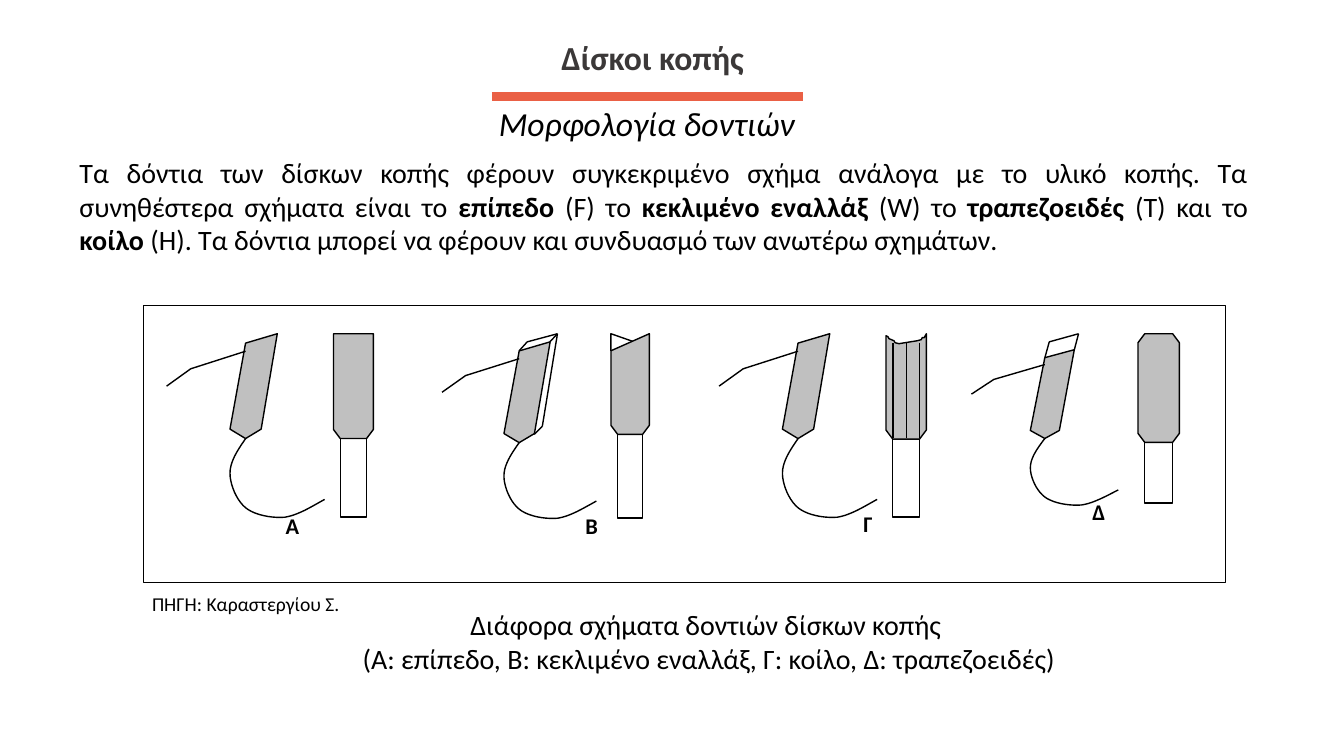
from lxml import etree
from pptx import Presentation
from pptx import util as u
from pptx.dml.color import RGBColor
from pptx.enum import shapes, text
from pptx.oxml import ns

BLACK = RGBColor(0, 0, 0)
WHITE = RGBColor(255, 255, 255)
TOOTH_GREY = RGBColor(0xC0, 0xC0, 0xC0)
TITLE_GREY = RGBColor(0x3B, 0x38, 0x38)
ACCENT = RGBColor(0xEA, 0x60, 0x45)
Pt = u.Pt
CENTER, JUSTIFY, LEFT = (text.PP_ALIGN.CENTER, text.PP_ALIGN.JUSTIFY,
                         text.PP_ALIGN.LEFT)

# Side view of a tooth, as fractions of its width and height
PROFILE = [(1, 0), (.66, .91), (.33, 1), (0, .91), (.33, .09)]
BACK = [(.33, .167), (-.83, .335), (-1.34, .5)]
GULLET = [(.33, 1), (.16, 1.11), (0, 1.22), (0, 1.33),
          (0, 1.44), (.14, 1.59), (.33, 1.66),
          (.52, 1.73), (.88, 1.76), (1.16, 1.75),
          (1.44, 1.73), (1.72, 1.65), (2, 1.58)]
BEVEL_X, BEVEL_Y = 4.8, 6.4


def curve(points, steps=10):
    """Points along a chain of cubic Bezier segments."""
    result = [points[0]]
    for i in range(0, len(points) - 1, 3):
        a, b, c, d = points[i:i + 4]
        for step in range(1, steps + 1):
            t = step / steps
            s = 1 - t
            result.append(tuple(
                s**3 * a[k] + 3 * s * s * t * b[k] + 3 * s * t * t * c[k]
                + t**3 * d[k] for k in (0, 1)))
    return result


class ToothSlide:
    font = "Calibri"

    def __init__(self, slide):
        self.shapes = slide.shapes

    def style(self, shape, fill, width):
        shape.shadow.inherit = False
        if fill is None:
            shape.fill.background()
        else:
            shape.fill.solid()
            shape.fill.fore_color.rgb = fill
        shape.line.color.rgb = BLACK
        shape.line.width = Pt(width)

    def rect(self, x, y, w, h, fill=None, width=1):
        shape = self.shapes.add_shape(
            shapes.MSO_SHAPE.RECTANGLE, Pt(x), Pt(y), Pt(w), Pt(h))
        self.style(shape, fill, width)

    def outline(self, points, fill=None, close=False):
        start, *rest = [(Pt(x), Pt(y)) for x, y in points]
        builder = self.shapes.build_freeform(*start)
        builder.add_line_segments(rest, close=close)
        self.style(builder.convert_to_shape(), fill, 1)

    def edges(self, *points, color=BLACK, width=1):
        for (x1, y1), (x2, y2) in zip(points, points[1:]):
            edge = self.shapes.add_connector(
                shapes.MSO_CONNECTOR.STRAIGHT, Pt(x1), Pt(y1), Pt(x2), Pt(y2))
            edge.line.color.rgb = color
            edge.line.width = Pt(width)
            etree.SubElement(edge._element.spPr, ns.qn("a:effectLst"))

    def side_view(self, x, y, w, h):
        def place(points):
            return [(x + fx * w, y + fy * h) for fx, fy in points]
        self.outline(place(PROFILE), TOOTH_GREY, close=True)
        self.outline(place(curve(GULLET)))
        self.outline(place(BACK))

    def front_view(self, top, bottom, shank_bottom):
        """Shank, then a body with bevelled lower corners under its top."""
        left, right = top[0][0], top[-1][0]
        self.rect(left + BEVEL_X, bottom, right - left - 2 * BEVEL_X,
                  shank_bottom - bottom, WHITE)
        self.outline(top + [(right, bottom - BEVEL_Y),
                            (right - BEVEL_X, bottom),
                            (left + BEVEL_X, bottom),
                            (left, bottom - BEVEL_Y)], TOOTH_GREY, close=True)

    def label(self, x, y, w, h, paragraphs, size, align=CENTER, color=BLACK,
              bold=False, italic=False, wrap=True, middle=False, indent=0,
              inset=(7.2, 3.6)):
        """Each paragraph is a list of runs; a (run,) tuple is set in bold."""
        frame = self.shapes.add_textbox(Pt(x), Pt(y), Pt(w), Pt(h)).text_frame
        frame.word_wrap = wrap
        frame.margin_left = frame.margin_right = Pt(inset[0])
        frame.margin_top = frame.margin_bottom = Pt(inset[1])
        frame.vertical_anchor = (text.MSO_ANCHOR.MIDDLE if middle
                                 else text.MSO_ANCHOR.TOP)
        for i, runs in enumerate(paragraphs):
            paragraph = frame.add_paragraph() if i else frame.paragraphs[0]
            paragraph.alignment = align
            if indent:
                paragraph._p.get_or_add_pPr().set("indent", str(Pt(indent)))
            for part in runs:
                strong = isinstance(part, tuple)
                run = paragraph.add_run()
                run.text = part[0] if strong else part
                run.font.name = self.font
                run.font.size = Pt(size)
                run.font.color.rgb = color
                run.font.bold = bold or strong
                run.font.italic = italic


def main():
    deck = Presentation()
    deck.slide_width, deck.slide_height = Pt(960), Pt(540)
    page = ToothSlide(deck.slides.add_slide(deck.slide_layouts[6]))

    # Heading
    page.label(185, 24.5, 562.3, 32.4, [["Δίσκοι κοπής"]], 24,
               color=TITLE_GREY, bold=True, inset=(3.6, 2.16))
    page.edges((351.4, 69.1), (573.8, 69.1), color=ACCENT, width=6.5)
    page.label(340.6, 69.8, 237.6, 36, [["Μορφολογία δοντιών"]], 24,
               align=JUSTIFY, italic=True, wrap=False, indent=8.6)

    # Description
    page.label(49.7, 107.3, 848.9, 79.9, [[
        "Τα δόντια των δίσκων κοπής φέρουν συγκεκριμένο σχήμα ανάλογα με το "
        "υλικό κοπής. Τα συνηθέστερα σχήματα είναι το ",
        ("επίπεδο",), " (F) το ", ("κεκλιμένο εναλλάξ ",), "(W) το ",
        ("τραπεζοειδές",), " (T) και το ", ("κοίλο",),
        " (H). Τα δόντια μπορεί να φέρουν και συνδυασμό των ανωτέρω σχημάτων.",
    ]], 20, align=JUSTIFY, middle=True)

    # Teeth seen from the side
    for tooth in [(164.3, 238.4, 33.8, 74.9), (360, 244.2, 33, 72),
                  (558.9, 238.4, 33.8, 74.9), (736, 249.8, 31.4, 63.4)]:
        page.side_view(*tooth)

    # Flat tooth
    page.front_view([(238.2, 238.4), (266.7, 238.4)], 313.2, 369.4)

    # Alternately sloped tooth
    page.outline([(436.4, 250.6), (436.4, 238.4), (452.9, 244.2)])
    page.front_view([(436.4, 250.6), (463.8, 238.4)], 310.3, 370.1)
    page.edges((392.8, 244.2), (398.2, 238.4), (376.6, 244.2), (370.8, 250.6))
    page.edges((398.2, 238.4), (387.4, 304.5), (381.6, 310.3))

    # Hollow tooth
    hollow_top = [(632.9, 239.8), (634.3, 240.5), (635, 241.9), (638.6, 243.4),
                  (639.4, 244.8), (642.2, 245.5), (655.2, 243.4),
                  (658.1, 242.6), (658.8, 241.2), (660.2, 241.2),
                  (661.7, 238.4)]
    page.front_view(hollow_top, 313.6, 369.4)
    for groove in (637.9, 647.3, 656.6):
        page.edges((groove, 244.8), (groove, 313.2))

    # Trapezoidal tooth
    trapezoid_top = [(812.9, 244.8), (817.7, 238.4),
                     (837.6, 238.4), (842.4, 244.8)]
    page.front_view(trapezoid_top, 316, 359.2)
    page.edges((767.4, 249.8), (770.4, 238.4), (749.5, 244.2), (746.4, 255.4))

    # Frame and letters
    page.rect(102.2, 218.2, 773.3, 198, width=0.75)
    for letter, x, y in [("Α", 167.8, 362.2), ("Β", 381.6, 362.2),
                         ("Γ", 578.9, 360.7), ("Δ", 743.8, 352.1)]:
        page.label(x, y, 82.1, 36, [[letter]], 16, bold=True)

    # Caption and source
    page.label(109.4, 430.6, 776.2, 55.4, [
        ["Διάφορα σχήματα δοντιών δίσκων κοπής "],
        ["(Α: επίπεδο, Β: κεκλιμένο εναλλάξ, Γ: κοίλο, Δ: τραπεζοειδές)"],
    ], 20, middle=True, indent=18)
    page.label(101.5, 419, 149.8, 24.5, [["ΠΗΓΗ: Καραστεργίου Σ."]], 14,
               align=LEFT, wrap=False)

    deck.save("out.pptx")


if __name__ == "__main__":
    main()
